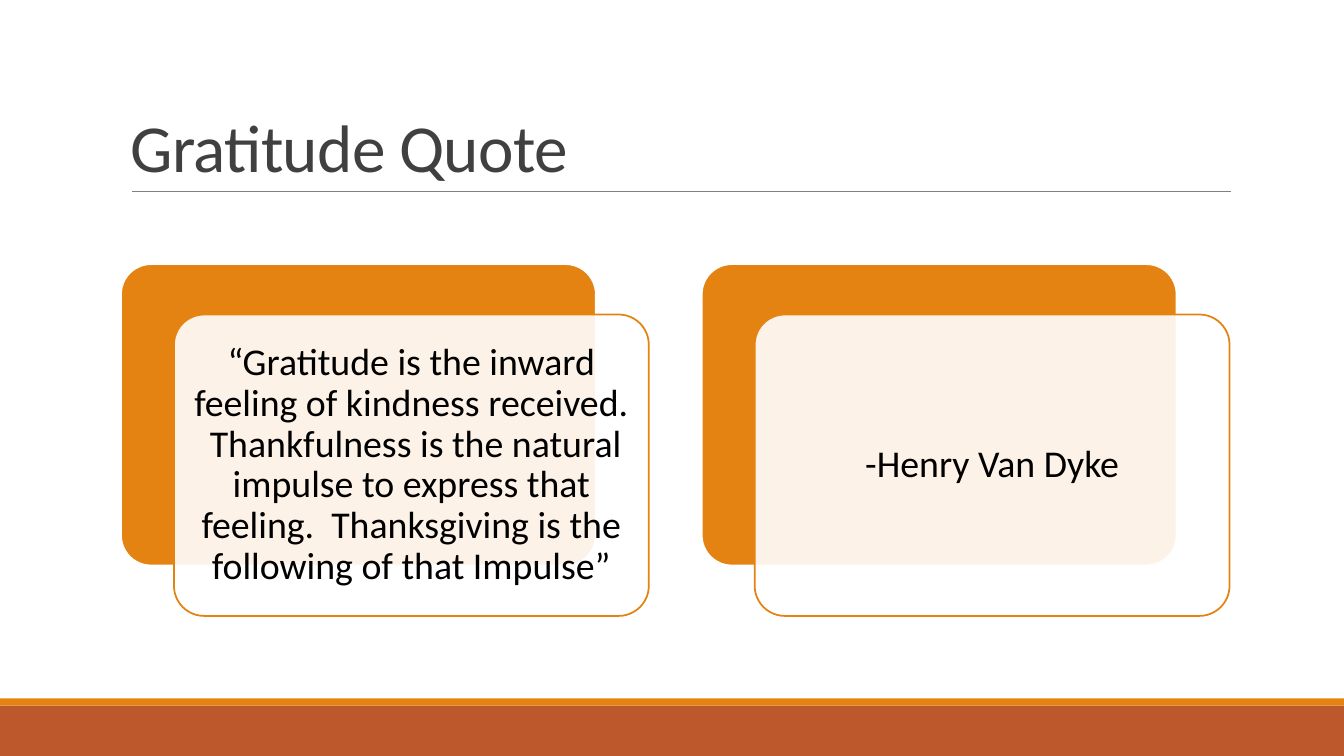
from lxml.etree import SubElement
from pptx import Presentation
from pptx.dml.color import RGBColor
from pptx.enum.shapes import MSO_CONNECTOR, MSO_SHAPE
from pptx.enum.text import MSO_ANCHOR as Anchor, PP_ALIGN as Align
from pptx.oxml.ns import qn
from pptx.util import Inches, Pt

COLORS = {
    "white": "FFFFFF",
    "orange": "E48312",
    "rust": "BD582C",
    "rule": "808080",
    "title": "404040",
    "text": "000000",
}


class QuoteSlide:
    font = "Calibri"

    def __init__(self, slide):
        self.shapes = slide.shapes

    def color(self, name):
        return RGBColor.from_string(COLORS[name])

    def box(self, kind, left, top, width, height, fill, line=None, alpha=None):
        box = self.shapes.add_shape(
            kind, Inches(left), Inches(top), Inches(width), Inches(height))
        box.shadow.inherit = False
        box.fill.solid()
        box.fill.fore_color.rgb = self.color(fill)
        if alpha is not None:
            tint = box.fill._xPr.find(".//" + qn("a:srgbClr"))
            SubElement(tint, qn("a:alpha"), val=str(alpha * 1000))
        if line:
            box.line.color.rgb = self.color(line)
            box.line.width = Pt(1.25)
        else:
            box.line.fill.background()
        return box

    def rounded(self, *args, **style):
        card = self.box(MSO_SHAPE.ROUNDED_RECTANGLE, *args, **style)
        card.adjustments[0] = 0.1

    def rule(self, left, right, y):
        rule = self.shapes.add_connector(
            MSO_CONNECTOR.STRAIGHT, Inches(left), Inches(y), Inches(right), Inches(y))
        rule.line.color.rgb = self.color("rule")
        rule.line.width = Pt(0.5)
        SubElement(rule._element.spPr, qn("a:effectLst"))

    def text(self, words, left, top, width, height, size, color, anchor,
             align=Align.LEFT, spacing=1.0, inset=(0.1, 0.05), tracking=None):
        frame = self.shapes.add_textbox(
            Inches(left), Inches(top), Inches(width), Inches(height)).text_frame
        frame.word_wrap = True
        frame.vertical_anchor = anchor
        frame.margin_left = frame.margin_right = Inches(inset[0])
        frame.margin_top = frame.margin_bottom = Inches(inset[1])
        paragraph = frame.paragraphs[0]
        run = paragraph.add_run()
        run.text = words
        paragraph.alignment = align
        paragraph.line_spacing = spacing
        paragraph.font.name = self.font
        paragraph.font.size = Pt(size)
        paragraph.font.color.rgb = self.color(color)
        if tracking is not None:
            run._r.get_or_add_rPr().set("spc", str(int(tracking * 100)))

    def quote_card(self, left, words):
        top, width, height = 2.62, 4.71, 2.99
        shift_x, shift_y, pad = 0.525, 0.5, 0.085
        self.rounded(left, top, width, height, fill="orange", line="white")
        left, top = left + shift_x, top + shift_y
        self.rounded(left, top, width, height, fill="white", line="orange", alpha=90)
        self.text(words, left + pad, top + pad, width - 2 * pad, height - 2 * pad,
                  27, "text", Anchor.MIDDLE, Align.CENTER, 0.9, (0.11, 0.11))


def main():
    prs = Presentation()
    prs.slide_width, prs.slide_height = Inches(13.33), Inches(7.5)
    page = QuoteSlide(prs.slides.add_slide(prs.slide_layouts[6]))

    # Footer bands
    page.box(MSO_SHAPE.RECTANGLE, 0, 7, 13.33, 0.5, "rust")
    page.box(MSO_SHAPE.RECTANGLE, 0, 6.93, 13.33, 0.07, "orange")

    # Title and rule
    page.rule(1.31, 12.21, 1.9)
    page.text("Gratitude Quote", 1.2, 0.31, 11, 1.59, 48, "title", Anchor.BOTTOM,
              spacing=0.85, tracking=-0.5)

    # Quote and its author
    cards = [
        "“Gratitude is the inward feeling of kindness received.  Thankfulness is the "
        "natural impulse to express that feeling.  Thanksgiving is the following of "
        "that Impulse”",
        "-Henry Van Dyke",
    ]
    for column, words in enumerate(cards):
        page.quote_card(1.2 + column * 5.76, words)

    prs.save("out.pptx")


if __name__ == "__main__":
    main()
